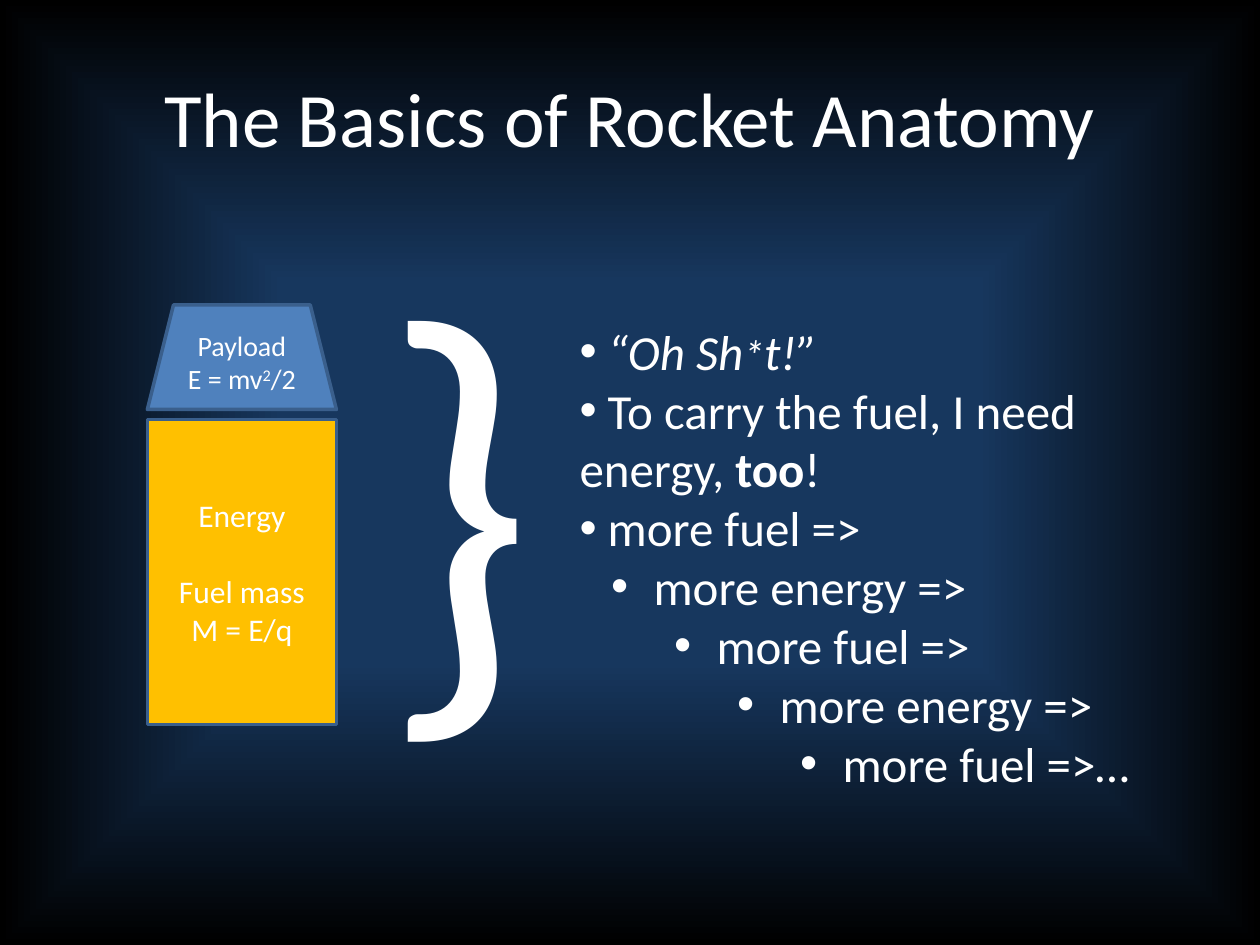
from dataclasses import dataclass

from lxml import etree
from pptx import Presentation
from pptx.dml.color import RGBColor
from pptx.enum.shapes import MSO_SHAPE
from pptx.enum.text import MSO_ANCHOR, MSO_AUTO_SIZE, PP_ALIGN
from pptx.oxml import parse_xml
from pptx.oxml.ns import nsdecls, qn
from pptx.util import Inches, Pt

TRAPEZOID, RECTANGLE = MSO_SHAPE.TRAPEZOID, MSO_SHAPE.RECTANGLE
TOP, MIDDLE = MSO_ANCHOR.TOP, MSO_ANCHOR.MIDDLE
LEFT, CENTER = PP_ALIGN.LEFT, PP_ALIGN.CENTER
NO_AUTOFIT = MSO_AUTO_SIZE.NONE
TITLE_AND_CONTENT = 1


@dataclass(frozen=True)
class Theme:
    font: str = "Calibri"
    text: RGBColor = RGBColor(0xFF, 0xFF, 0xFF)
    glow: RGBColor = RGBColor(0x17, 0x37, 0x5E)
    edge: RGBColor = RGBColor(0x00, 0x00, 0x00)
    payload: RGBColor = RGBColor(0x4F, 0x81, 0xBD)
    fuel: RGBColor = RGBColor(0xFF, 0xC0, 0x00)
    outline: RGBColor = RGBColor(0x3A, 0x5F, 0x8C)
    title_size: int = 44
    list_size: int = 28
    star_size: int = 24
    payload_size: int = 16
    fuel_size: int = 18
    brace_size: int = 280


THEME = Theme()

# Each list item: level and its spans of (text, font settings)
REASONS = [
    (0, [(" “Oh Sh", {"italic": True}),
         ("*", {"italic": True, "size": Pt(THEME.star_size)}),
         ("t!”", {"italic": True})]),
    (0, [(" To carry the fuel, I need energy, ", {}), ("too", {"bold": True}), ("!", {})]),
    (0, [(" more fuel =>", {})]),
    (1, [(" more energy =>", {})]),
    (2, [(" more fuel =>", {})]),
    (3, [(" more energy =>", {})]),
    (4, [(" more fuel =>…", {})]),
]


def place(shape, box):
    shape.left, shape.top, shape.width, shape.height = (Inches(value) for value in box)


def style_para(para, size, align):
    para.alignment = align
    para.font.name = THEME.font
    para.font.size = Pt(size)
    para.font.color.rgb = THEME.text


def add_spans(para, spans):
    for text, settings in spans:
        span = para.add_run()
        span.text = text
        for name, value in settings.items():
            setattr(span.font, name, value)


def next_para(frame, index):
    return frame.add_paragraph() if index else frame.paragraphs[0]


def paint_background(page):
    fill = page.background.fill
    fill.gradient()
    stops = zip(fill.gradient_stops, ((0.4, THEME.glow), (1, THEME.edge)))
    for stop, (position, color) in stops:
        stop.position = position
        stop.color.rgb = color
    # Let the gradient spread from the centre instead of along a line
    linear = page.background._cSld.find(".//" + qn("a:lin"))
    spread = parse_xml(
        f'<a:path {nsdecls("a")} path="shape">'
        '<a:fillToRect l="50000" t="50000" r="50000" b="50000"/></a:path>')
    linear.getparent().replace(linear, spread)


def add_title(page, box):
    title = page.shapes.title
    place(title, box)
    title.text_frame.text = "The Basics of Rocket Anatomy"
    title.text_frame.vertical_anchor = MIDDLE
    style_para(title.text_frame.paragraphs[0], THEME.title_size, CENTER)


def add_stage(page, kind, box, color, size, lines):
    stage = page.shapes.add_shape(kind, *(Inches(value) for value in box))
    stage.shadow.inherit = False
    stage.fill.solid()
    stage.fill.fore_color.rgb = color
    stage.line.color.rgb = THEME.outline
    stage.line.width = Pt(2)
    frame = stage.text_frame
    frame.word_wrap = True
    frame.vertical_anchor = MIDDLE
    for index, spans in enumerate(lines):
        para = next_para(frame, index)
        style_para(para, size, CENTER)
        add_spans(para, spans)
    return frame


def add_rocket(page, box):
    left, top, width, height = box
    payload_height, gap = 0.83, 0.08
    fuel_top = top + payload_height + gap

    # Payload on top, with a raised exponent
    payload = add_stage(
        page, TRAPEZOID, (left, top, width, payload_height), THEME.payload,
        THEME.payload_size,
        [[("Payload", {})], [("E = mv", {}), ("2", {}), ("/2", {})]])
    exponent = payload.paragraphs[1].runs[1]
    exponent._r.get_or_add_rPr().set("baseline", "30000")

    # Fuel tank below
    fuel = add_stage(
        page, RECTANGLE, (left, fuel_top, width, top + height - fuel_top),
        THEME.fuel, THEME.fuel_size,
        [[("Energy", {})], [("Fuel mass", {})], [("M = E/q", {})]])
    fuel.paragraphs[1].space_before = Pt(22)


def add_brace(page, box):
    brace = page.shapes.add_textbox(*(Inches(value) for value in box))
    frame = brace.text_frame
    frame.word_wrap = True
    frame.text = "}"
    style_para(frame.paragraphs[0], THEME.brace_size, LEFT)


def set_bullet(para, level):
    props = para._p.get_or_add_pPr()
    props.set("marL", str(Inches(0.5 * level)))
    props.set("indent", str(Inches(-0.25 if level else 0)))
    bullet_font = etree.Element(qn("a:buFont"), typeface="Arial")
    bullet = etree.Element(qn("a:buChar"), char="•")
    defaults = props.find(qn("a:defRPr"))
    defaults.addprevious(bullet_font)
    defaults.addprevious(bullet)


def add_reasons(page, box):
    body = page.placeholders[1]
    place(body, box)
    frame = body.text_frame
    frame.word_wrap = True
    frame.auto_size = NO_AUTOFIT
    frame.vertical_anchor = TOP
    for index, (level, spans) in enumerate(REASONS):
        para = next_para(frame, index)
        para.level = level
        para.space_before = Pt(0)
        style_para(para, THEME.list_size, LEFT)
        set_bullet(para, level)
        add_spans(para, spans)


def main():
    deck = Presentation()
    deck.slide_width, deck.slide_height = Inches(10), Inches(7.5)
    page = deck.slides.add_slide(deck.slide_layouts[TITLE_AND_CONTENT])
    paint_background(page)
    add_title(page, (0.5, 0.3, 9, 1.25))
    add_rocket(page, (1.17, 2.42, 1.5, 3.33))
    add_brace(page, (2.92, 1.42, 1.42, 4.81))
    add_reasons(page, (4.5, 2.5, 5, 3.87))
    deck.save("out.pptx")


if __name__ == "__main__":
    main()
